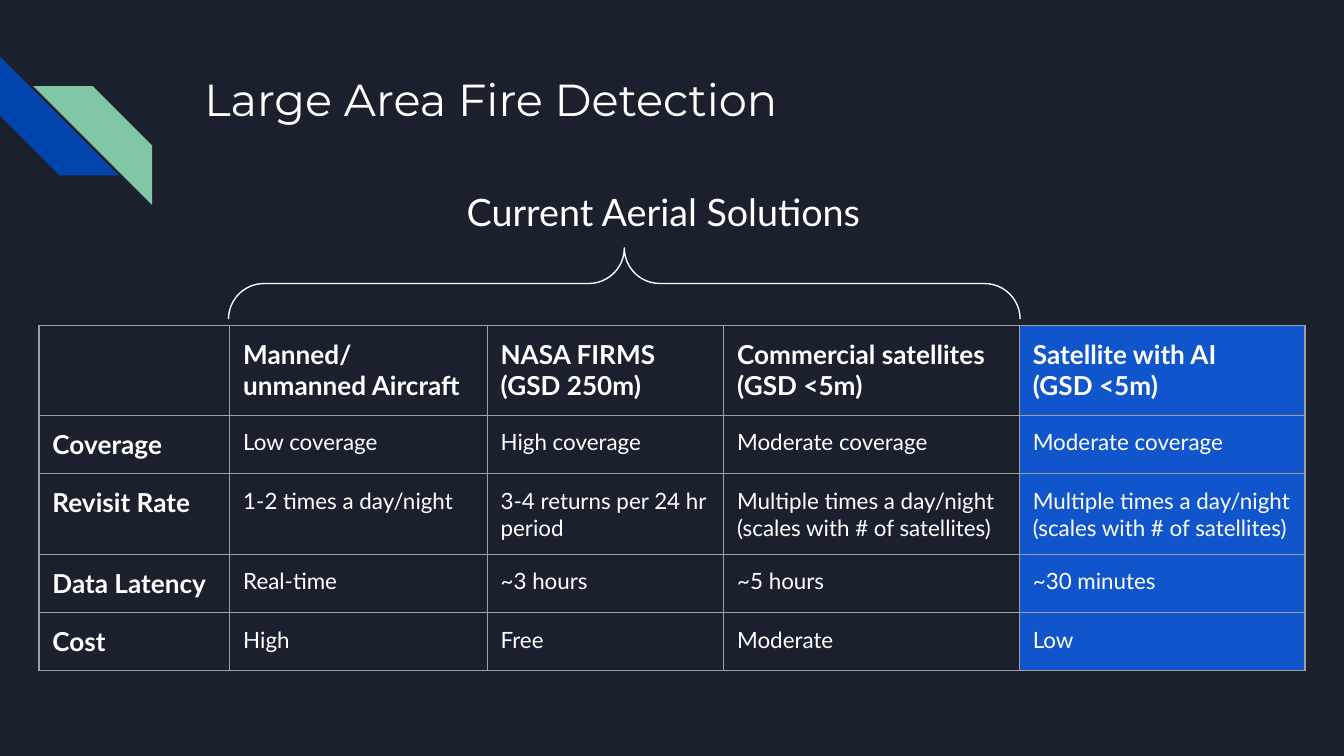
from lxml.etree import SubElement
from pptx import Presentation
from pptx.dml.color import RGBColor
from pptx.enum.shapes import MSO_SHAPE
from pptx.enum.text import MSO_ANCHOR, MSO_AUTO_SIZE, PP_ALIGN
from pptx.oxml.ns import qn
from pptx.util import Inches, Pt

# A 16:9 slide on a grid of 100 columns; rows are as tall as columns are wide
SLIDE_WIDTH = Inches(10)
SLIDE_HEIGHT = SLIDE_WIDTH * 9 // 16
UNIT = SLIDE_WIDTH / 100

BACKGROUND, WHITE, BORDER = "1B212C", "FFFFFF", "9E9E9E"
BLUE, GREEN, HIGHLIGHT = "0145AC", "82C7A5", "1155CC"

COLUMN_WIDTHS = [14.2, 19.15, 17.6, 22, 21.25]
ROW_HEIGHTS = [6.7, 4.3, 6, 4.3, 4.3]
COMPARISON = [
    ["", "Manned/unmanned Aircraft", "NASA FIRMS (GSD 250m)",
     "Commercial satellites (GSD <5m)", "Satellite with AI\n(GSD <5m)"],
    ["Coverage", "Low coverage", "High coverage", "Moderate coverage", "Moderate coverage"],
    ["Revisit Rate", "1-2 times a day/night", "3-4 returns per 24 hr period",
     "Multiple times a day/night (scales with # of satellites)",
     "Multiple times a day/night (scales with # of satellites)"],
    ["Data Latency", "Real-time", "~3 hours", "~5 hours", "~30 minutes"],
    ["Cost", "High", "Free", "Moderate", "Low"],
]


def grid(units):
    return round(units * UNIT)


def color(hex_value):
    return RGBColor.from_string(hex_value)


def add_run(paragraph, text, font_name, size, bold=False):
    run = paragraph.add_run()
    run.text = text
    run.font.name = font_name
    run.font.size = Pt(size)
    run.font.bold = bold
    run.font.color.rgb = color(WHITE)


def fill_placeholder(placeholder, box, text, font_name, size, alignment):
    placeholder.left, placeholder.top, placeholder.width, placeholder.height = map(grid, box)
    frame = placeholder.text_frame
    frame.word_wrap = True
    frame.auto_size = MSO_AUTO_SIZE.NONE
    frame.vertical_anchor = MSO_ANCHOR.TOP
    frame.margin_left = frame.margin_right = grid(1)
    frame.margin_top = frame.margin_bottom = grid(1)
    paragraph = frame.paragraphs[0]
    properties = paragraph._p.get_or_add_pPr()
    properties.set("marL", "0")
    properties.set("indent", "0")
    SubElement(properties, qn("a:buNone"))
    paragraph.alignment = alignment
    paragraph.space_before = Pt(0)
    add_run(paragraph, text, font_name, size)
    return paragraph


def add_stripes(slide, left, top, size):
    """Two diagonal stripes, the second shifted and mirrored."""
    for shift_x, shift_y, fill in ((0, 0, BLUE), (0.28, 0.25, GREEN)):
        stripe = slide.shapes.add_shape(
            MSO_SHAPE.DIAGONAL_STRIPE, grid(left + shift_x * size),
            grid(top + shift_y * size), grid(size), grid(size))
        stripe.shadow.inherit = False
        stripe.fill.solid()
        stripe.fill.fore_color.rgb = color(fill)
        stripe.line.fill.background()
        if fill == BLUE:
            stripe.rotation = 270
        else:
            stripe._element.spPr.find(qn("a:xfrm")).set("flipH", "1")


def add_brace(slide, left, top, width, height):
    """A left brace turned to point up, filling the given box."""
    center_x, center_y = left + width / 2, top + height / 2
    brace = slide.shapes.add_shape(
        MSO_SHAPE.LEFT_BRACE, grid(center_x - height / 2), grid(center_y - width / 2),
        grid(height), grid(width))
    brace.rotation = 90
    brace.adjustments[0] = 0.5
    brace.shadow.inherit = False
    brace.fill.background()
    brace.line.color.rgb = color(WHITE)
    brace.line.width = Pt(0.75)


def add_borders(cell):
    properties = cell._tc.get_or_add_tcPr()
    for side in ("a:lnL", "a:lnR", "a:lnT", "a:lnB"):
        line = SubElement(properties, qn(side), w=str(Pt(0.75)))
        SubElement(SubElement(line, qn("a:solidFill")), qn("a:srgbClr"), val=BORDER)


def format_cell(cell, text, is_heading, is_highlighted):
    add_borders(cell)
    if is_highlighted:
        cell.fill.solid()
        cell.fill.fore_color.rgb = color(HIGHLIGHT)
    else:
        cell.fill.background()
    cell.margin_left = cell.margin_right = grid(1)
    cell.margin_top = cell.margin_bottom = grid(1)
    if not text:
        return
    frame = cell.text_frame
    for index, line in enumerate(text.split("\n")):
        paragraph = frame.add_paragraph() if index else frame.paragraphs[0]
        add_run(paragraph, line, "Lato", 14 if is_heading else 12, is_heading)


def add_comparison(slide, left, top):
    frame = slide.shapes.add_table(
        len(ROW_HEIGHTS), len(COLUMN_WIDTHS), grid(left), grid(top),
        grid(sum(COLUMN_WIDTHS)), grid(sum(ROW_HEIGHTS)))
    table = frame.table
    table.first_row = table.horz_banding = False
    for column, width in zip(table.columns, COLUMN_WIDTHS):
        column.width = grid(width)
    for row, height in zip(table.rows, ROW_HEIGHTS):
        row.height = grid(height)
    last_column = len(COLUMN_WIDTHS) - 1
    for row_index, row_texts in enumerate(COMPARISON):
        for column_index, text in enumerate(row_texts):
            format_cell(table.cell(row_index, column_index), text,
                        row_index == 0 or column_index == 0,
                        column_index == last_column)


def main():
    presentation = Presentation()
    presentation.slide_width, presentation.slide_height = SLIDE_WIDTH, SLIDE_HEIGHT
    slide = presentation.slides.add_slide(presentation.slide_layouts[1])
    slide.background.fill.solid()
    slide.background.fill.fore_color.rgb = color(BACKGROUND)

    # Corner decoration and title
    add_stripes(slide, 0, 4.2, 8.85)
    fill_placeholder(slide.shapes.title, (14.2, 4.35, 77, 10),
                     "Large Area Fire Detection", "Montserrat", 24, PP_ALIGN.LEFT)

    # Comparison table, with a brace over the three current solutions
    table_left, table_top = 2.9, 24.2
    add_comparison(slide, table_left, table_top)
    add_brace(slide, table_left + COLUMN_WIDTHS[0] - 0.1, 18.45,
              sum(COLUMN_WIDTHS[1:4]) + 0.15, 5.3)
    label = fill_placeholder(slide.placeholders[1], (33.3, 13.3, 32.1, 6.4),
                             "Current Aerial Solutions", "Lato", 20.2, PP_ALIGN.CENTER)
    label.line_spacing = 0.95

    presentation.save("out.pptx")


if __name__ == "__main__":
    main()
